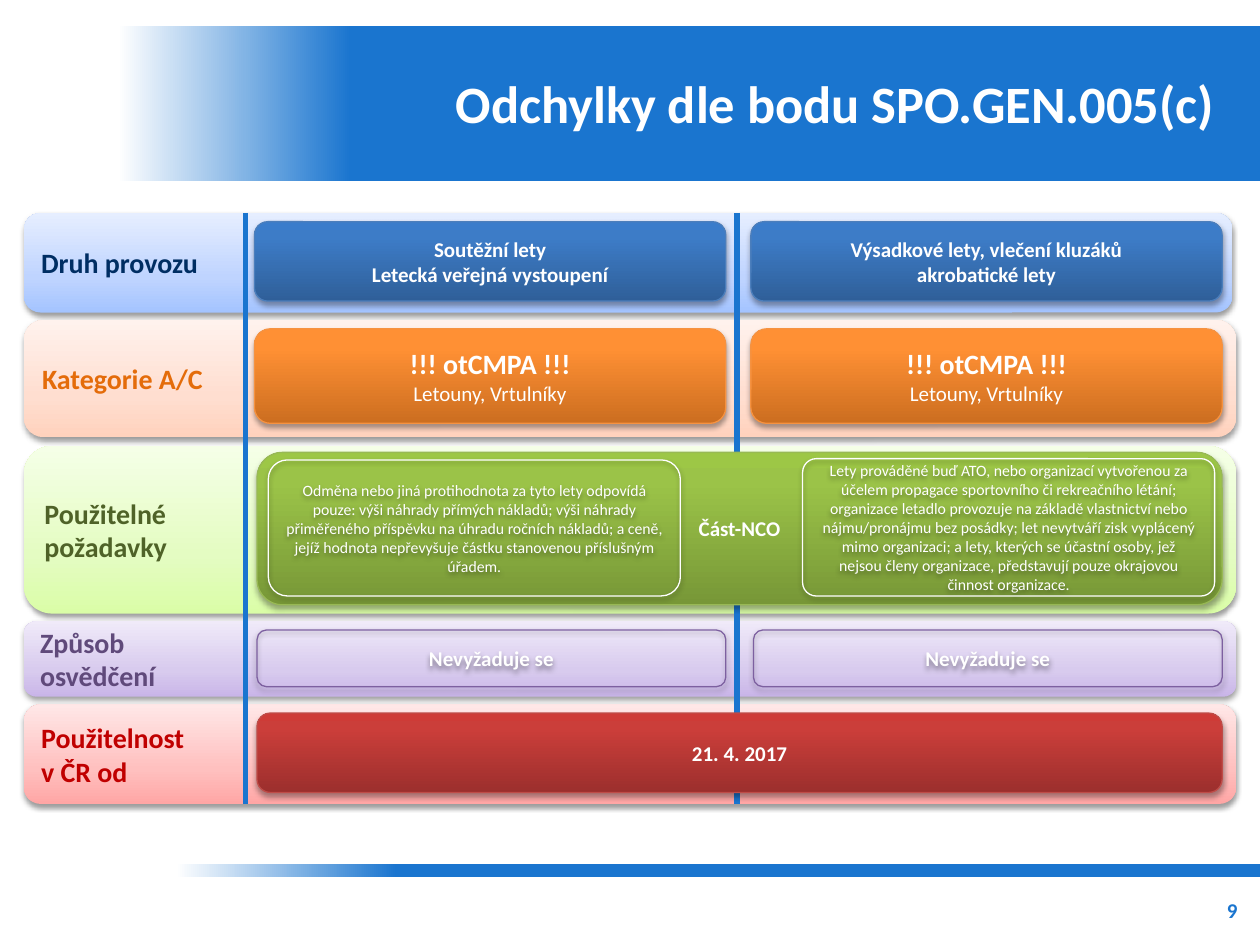
from dataclasses import dataclass

from lxml import etree
from pptx import Presentation
from pptx import util as u
from pptx.dml.color import RGBColor
from pptx.enum import shapes, text
from pptx.oxml import ns


@dataclass(frozen=True)
class Theme:
    font: str = "Calibri"
    white: str = "FFFFFF"
    blue: str = "1A75CF"
    purple: str = "7D60A0"
    title: int = 30
    label: int = 16
    body: int = 12
    note: int = 9
    fade: tuple = ((2, "FFFFFF"), (22, "1A75CF"))
    bands: tuple = (
        ("002E63", "A4C4FF", "BFD4FF", "E6EEFF"),
        ("E46C0A", "FFD2BD", "FFDED0", "FFF2ED"),
        ("4F6228", "DAFDA7", "E4FCC2", "F5FFE7"),
        ("604A7B", "C9B5E8", "D8CBEE", "F0EAF9"),
        ("C00000", "FFA6A5", "FFC0BF", "FFE7E7"),
    )
    operation: tuple = ("4B7EBC", "2F5F99", "3D7CC7", "3A7CCB")
    aircraft: tuple = ("F69240", "CC6E20", "FF9034", "FF9136")
    rules: tuple = ("98B955", "779737", "9BC348", "9DC746")
    validity: tuple = ("BF4C48", "9C2F2D", "CB3E3A", "CE3B37")


class Board:
    COLUMNS = 100

    def __init__(self, deck, theme):
        self.theme = theme
        self.cell = deck.slide_width // self.COLUMNS
        self.slide = deck.slides.add_slide(deck.slide_layouts[6])

    def grid(self, *lengths):
        return [u.Emu(round(n * self.cell)) for n in lengths]

    def add_lines(self, shape, lines, align):
        frame = shape.text_frame
        frame.word_wrap = True
        frame.vertical_anchor = text.MSO_ANCHOR.MIDDLE
        for i, (words, size, color, bold) in enumerate(lines):
            paragraph = frame.paragraphs[0] if i == 0 else frame.add_paragraph()
            paragraph.alignment = align
            run = paragraph.add_run()
            run.text = words
            run.font.name = self.theme.font
            run.font.size = u.Pt(size)
            run.font.bold = bold
            run.font.color.rgb = RGBColor.from_string(color)

    def gradient(self, shape, stops, angle):
        shape.fill.gradient()
        shape.fill.gradient_angle = angle
        stop_list = shape._element.spPr.find(".//" + ns.qn("a:gsLst"))
        for stop in list(stop_list):
            stop_list.remove(stop)
        for share, color in stops:
            stop = etree.SubElement(stop_list, ns.qn("a:gs"), pos=str(share * 1000))
            etree.SubElement(stop, ns.qn("a:srgbClr"), val=color)

    def cast_shadow(self, shape, opacity, distance):
        effects = shape._element.spPr.find(ns.qn("a:effectLst"))
        shadow = etree.SubElement(
            effects, ns.qn("a:outerShdw"), blurRad=str(u.Pt(3.1)),
            dist=str(u.Pt(distance)), dir="5400000", rotWithShape="0")
        color = etree.SubElement(shadow, ns.qn("a:srgbClr"), val="000000")
        etree.SubElement(color, ns.qn("a:alpha"), val=str(opacity * 1000))

    def fade_bar(self, *place):
        bar = self.slide.shapes.add_shape(shapes.MSO_SHAPE.RECTANGLE, *self.grid(*place))
        bar.shadow.inherit = False
        bar.line.fill.background()
        self.gradient(bar, self.theme.fade, 0)

    def caption(self, place, words, size, color):
        box = self.slide.shapes.add_textbox(*self.grid(*place))
        self.add_lines(box, [(words, size, color, True)], text.PP_ALIGN.RIGHT)

    def panel(self, place, lines, stops=None, outline=None, corner=None,
              align=text.PP_ALIGN.CENTER, opacity=38, distance=1.6):
        panel = self.slide.shapes.add_shape(
            shapes.MSO_SHAPE.ROUNDED_RECTANGLE, *self.grid(*place))
        panel.shadow.inherit = False
        if corner:
            panel.adjustments[0] = corner
        if stops:
            self.gradient(panel, stops, 90)
        else:
            panel.fill.background()
        if outline:
            panel.line.color.rgb = RGBColor.from_string(outline)
            panel.line.width = u.Pt(0.75)
        else:
            panel.line.fill.background()
        self.cast_shadow(panel, opacity, distance)
        self.add_lines(panel, lines, align)

    def band(self, place, words, colors):
        ink, *shades = colors
        self.panel(place, [(w, self.theme.label, ink, True) for w in words],
                   zip((0, 35, 100), shades), align=text.PP_ALIGN.LEFT)

    def card(self, place, lines, colors):
        outline, *shades = colors
        self.panel(place, lines, zip((0, 80, 100), shades), outline,
                   opacity=35, distance=1.8)

    def divider(self, column, top, bottom):
        line = self.slide.shapes.add_connector(
            shapes.MSO_CONNECTOR.STRAIGHT, *self.grid(column, top, column, bottom))
        line.line.color.rgb = RGBColor.from_string(self.theme.blue)
        line.line.width = u.Pt(3)
        etree.SubElement(line._element.spPr, ns.qn("a:effectLst"))


def main():
    deck = Presentation()
    deck.slide_width, deck.slide_height = u.Inches(10), u.Inches(7.5)
    theme = Theme()
    board = Board(deck, theme)

    def strong(words, size=theme.body):
        return words, size, theme.white, True

    def plain(words, size=theme.body):
        return words, size, theme.white, False

    board.fade_bar(7.5, 2.1, 92.5, 12.3)
    board.fade_bar(12.2, 68.6, 87.8, 1)
    board.caption((7.5, 1.9, 89.9, 12.5), "Odchylky dle bodu SPO.GEN.005(c)",
                  theme.title, theme.white)
    board.caption((75.9, 70.2, 23.3, 4), "9", theme.body, theme.blue)

    bands = (
        (16.9, 7.9, 95.9, ["Druh provozu"]),
        (25.4, 9.3, 96.2, ["Kategorie A/C"]),
        (35.4, 13.3, 96.2, ["Použitelné", "požadavky"]),
        (49.3, 6, 96.2, ["Způsob", "osvědčení"]),
        (55.9, 7.9, 96.2, ["Použitelnost", "v ČR od"]),
    )
    for (top, height, width, words), colors in zip(bands, theme.bands):
        board.band((1.9, top, width, height), words, colors)

    for column in (19.5, 58.5):
        board.divider(column, 16.9, 63.8)

    operations = (
        ("Soutěžní lety", "Letecká veřejná vystoupení"),
        ("Výsadkové lety, vlečení kluzáků", "akrobatické lety"),
    )
    for left, operation in zip((20.2, 59.6), operations):
        board.card((left, 17.6, 37.4, 6.3), [strong(w) for w in operation],
                   theme.operation)
        board.card((left, 26.1, 37.4, 7.5),
                   [strong("!!! otCMPA !!!", theme.label), plain("Letouny, Vrtulníky")],
                   theme.aircraft)
        board.panel((left + 0.2, 50, 37.2, 4.5), [strong("Nevyžaduje se")],
                    outline=theme.purple)

    board.card((20.4, 35.9, 76.6, 12.1), [strong("Část-NCO")], theme.rules)
    board.card((20.4, 56.6, 76.6, 6.3), [strong("21. 4. 2017")], theme.validity)

    conditions = (
        ((21.3, 36.5, 32.7, 10.8), 0.14,
         "Odměna nebo jiná protihodnota za tyto lety odpovídá pouze: výši náhrady "
         "přímých nákladů; výši náhrady přiměřeného příspěvku na úhradu ročních "
         "nákladů; a ceně, jejíž hodnota nepřevyšuje částku stanovenou příslušným "
         "úřadem."),
        ((63.7, 36.4, 32.7, 10.9), 0.1,
         "Lety prováděné buď ATO, nebo organizací vytvořenou za účelem propagace "
         "sportovního či rekreačního létání; organizace letadlo provozuje na základě "
         "vlastnictví nebo nájmu/pronájmu bez posádky; let nevytváří zisk vyplácený "
         "mimo organizaci; a lety, kterých se účastní osoby, jež nejsou členy "
         "organizace, představují pouze okrajovou činnost organizace."),
    )
    for place, corner, words in conditions:
        board.panel(place, [plain(words, theme.note)], outline=theme.white, corner=corner)

    deck.save("out.pptx")


if __name__ == "__main__":
    main()
